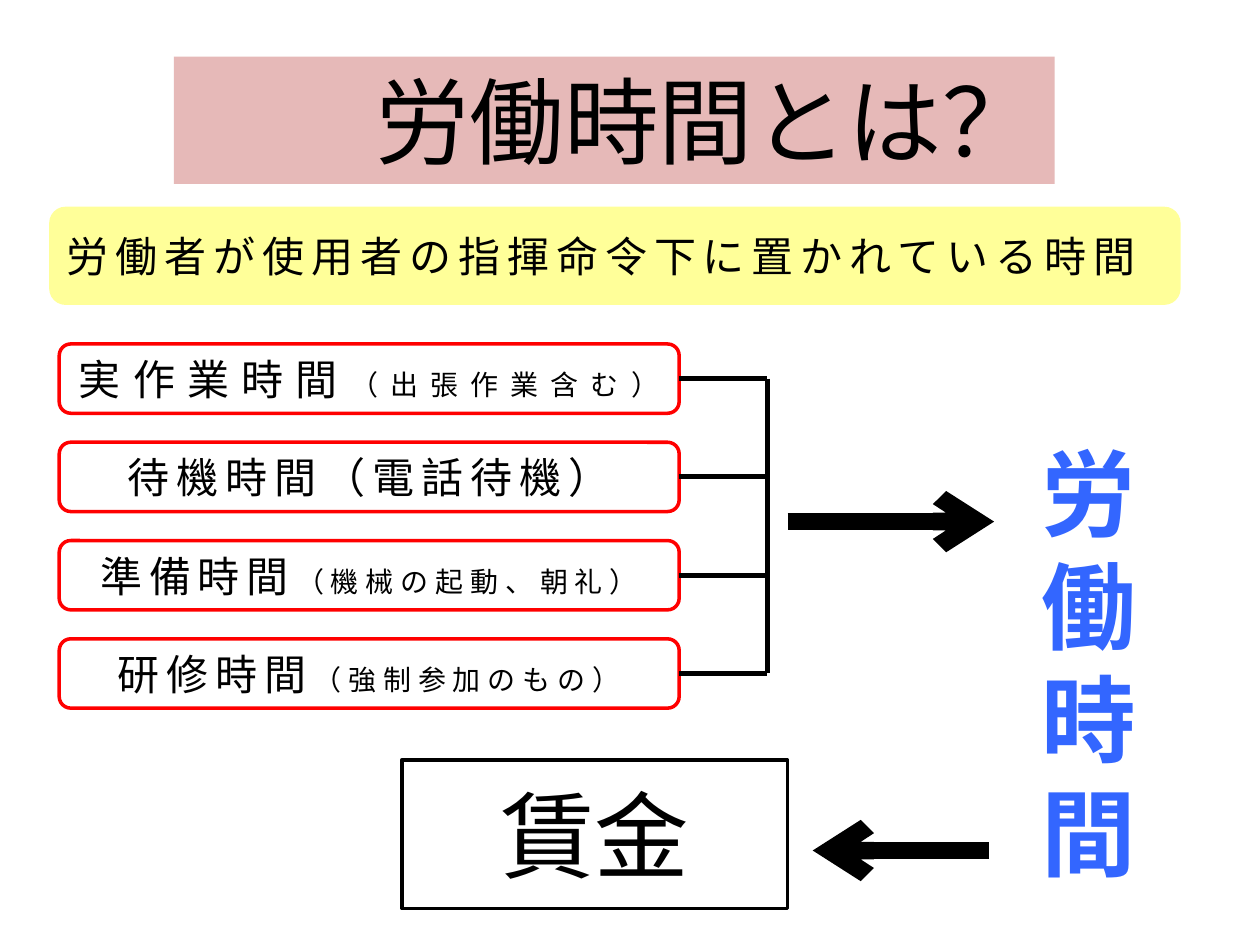
from pptx import Presentation
from pptx.dml.color import RGBColor
from pptx.enum.shapes import MSO_CONNECTOR, MSO_SHAPE
from pptx.enum.text import MSO_ANCHOR, MSO_AUTO_SIZE, PP_ALIGN
from pptx.oxml.ns import qn
from pptx.util import Inches, Pt
from lxml import etree

LEFT, CENTER = PP_ALIGN.LEFT, PP_ALIGN.CENTER
TOP, MIDDLE = MSO_ANCHOR.TOP, MSO_ANCHOR.MIDDLE
NO_AUTOFIT = MSO_AUTO_SIZE.NONE
RECTANGLE, ROUNDED = MSO_SHAPE.RECTANGLE, MSO_SHAPE.ROUNDED_RECTANGLE
STRAIGHT = MSO_CONNECTOR.STRAIGHT
RIGHT_SIDE = 3

THEME = {
    "latin": "Calibri", "japanese": "Noto Sans CJK JP",
    "black": "000000", "white": "FFFFFF", "red": "FF0000",
    "pink": "E6B9B8", "yellow": "FFFF99", "blue": "3366FF",
    "large": 54, "body": 24, "note": 16,
}

TITLE = "労働時間とは？"
DEFINITION = "労働者が使用者の指揮命令下に置かれている時間"
KINDS = [  # name, note in smaller type, letter spacing in points
    ("実作業時間", "（出張作業含む）", 7),
    ("待機時間（電話待機）", "", 4),
    ("準備時間", "（機械の起動、朝礼）", 4),
    ("研修時間", "（強制参加のもの）", 4),
]
RESULT = "労働時間"
WAGE = "賃金"

KIND_LEFT, KIND_TOP, KIND_WIDTH, KIND_HEIGHT = 0.47, 2.73, 4.92, 0.55
KIND_STEP = 0.78
BRACKET_X = 6.09
ARROWS = [((6.25, 4.14), (7.89, 4.14)), ((7.85, 6.75), (6.45, 6.75))]


def color(name):
    return RGBColor.from_string(THEME[name])


def paint(shape, fill=None, line=None, width=2):
    if fill:
        shape.fill.solid()
        shape.fill.fore_color.rgb = color(fill)
    else:
        shape.fill.background()
    if line:
        shape.line.color.rgb = color(line)
        shape.line.width = Pt(width)
    else:
        shape.line.fill.background()


def write(shape, spans, align, anchor, spacing=0, font="latin", ink="black"):
    """Fill a shape with one paragraph of (text, size name) spans."""
    frame = shape.text_frame
    frame.word_wrap = True
    frame.auto_size = NO_AUTOFIT
    frame.vertical_anchor = anchor
    para = frame.paragraphs[0]
    para.alignment = align
    for text, size in spans:
        span = para.add_run()
        span.text = text
        span.font.name = THEME[font]
        span.font.size = Pt(THEME[size])
        span.font.color.rgb = color(ink)
        properties = span.font._element
        etree.SubElement(properties, qn("a:ea"), typeface=THEME["japanese"])
        if spacing:
            properties.set("spc", str(spacing * 100))
    return para


def add_box(slide, kind, place, **style):
    box = slide.shapes.add_shape(kind, *map(Inches, place))
    box.shadow.inherit = False
    paint(box, **style)
    return box


def add_line(slide, start, end, width=3, arrow=False):
    line = slide.shapes.add_connector(STRAIGHT, *map(Inches, start + end))
    line.line.color.rgb = color("black")
    line.line.width = Pt(width)
    if arrow:
        etree.SubElement(line.line._get_or_add_ln(), qn("a:tailEnd"), type="arrow")
    etree.SubElement(line._element.spPr, qn("a:effectLst"))
    return line


def outline_text(span, name, width):
    outline = etree.Element(qn("a:ln"), w=str(Pt(width)))
    fill = etree.SubElement(outline, qn("a:solidFill"))
    etree.SubElement(fill, qn("a:srgbClr"), val=THEME[name])
    span.font._element.insert(0, outline)


def add_heading(slide):
    title = slide.shapes.title
    title.left, title.top = Inches(1.38), Inches(0.45)
    title.width, title.height = Inches(6.99), Inches(1.01)
    paint(title, fill="pink")
    write(title, [(TITLE, "large")], LEFT, TOP)
    title.text_frame.margin_left = Inches(1.6)

    definition = add_box(slide, ROUNDED, (0.39, 1.64, 8.98, 0.78), fill="yellow")
    write(definition, [(DEFINITION, "body")], LEFT, MIDDLE, 4, "japanese")


def add_kinds(slide):
    """Stack the kinds of working time and bracket them on the right."""
    middles = []
    for index, (name, note, spacing) in enumerate(KINDS):
        top = KIND_TOP + index * KIND_STEP
        box = add_box(slide, ROUNDED, (KIND_LEFT, top, KIND_WIDTH, KIND_HEIGHT),
                      fill="white", line="red")
        spans = [(name, "body")] + ([(note, "note")] if note else [])
        write(box, spans, CENTER, MIDDLE, spacing)
        middle = top + KIND_HEIGHT / 2
        branch = add_line(slide, (KIND_LEFT + KIND_WIDTH, middle), (BRACKET_X, middle))
        branch.begin_connect(box, RIGHT_SIDE)
        middles.append(middle)
    add_line(slide, (BRACKET_X, middles[0]), (BRACKET_X, middles[-1]))


def add_outcome(slide):
    for start, end in ARROWS:
        add_line(slide, start, end, width=10, arrow=True)

    # The box is one character wide, so the word wraps into a column.
    result = slide.shapes.add_textbox(*map(Inches, (7.85, 3.4, 1.58, 3.74)))
    para = write(result, [(RESULT, "large")], CENTER, TOP, font="japanese", ink="blue")
    para.runs[0].font.bold = True
    outline_text(para.runs[0], "white", 1.4)

    wage = add_box(slide, RECTANGLE, (3.19, 6.03, 3.06, 1.18), line="black")
    write(wage, [(WAGE, "large")], CENTER, MIDDLE)


def main():
    deck = Presentation()
    deck.slide_width, deck.slide_height = Inches(10), Inches(7.5)
    slide = deck.slides.add_slide(deck.slide_layouts.get_by_name("Title Only"))
    add_heading(slide)
    add_kinds(slide)
    add_outcome(slide)
    deck.save("out.pptx")


if __name__ == "__main__":
    main()
